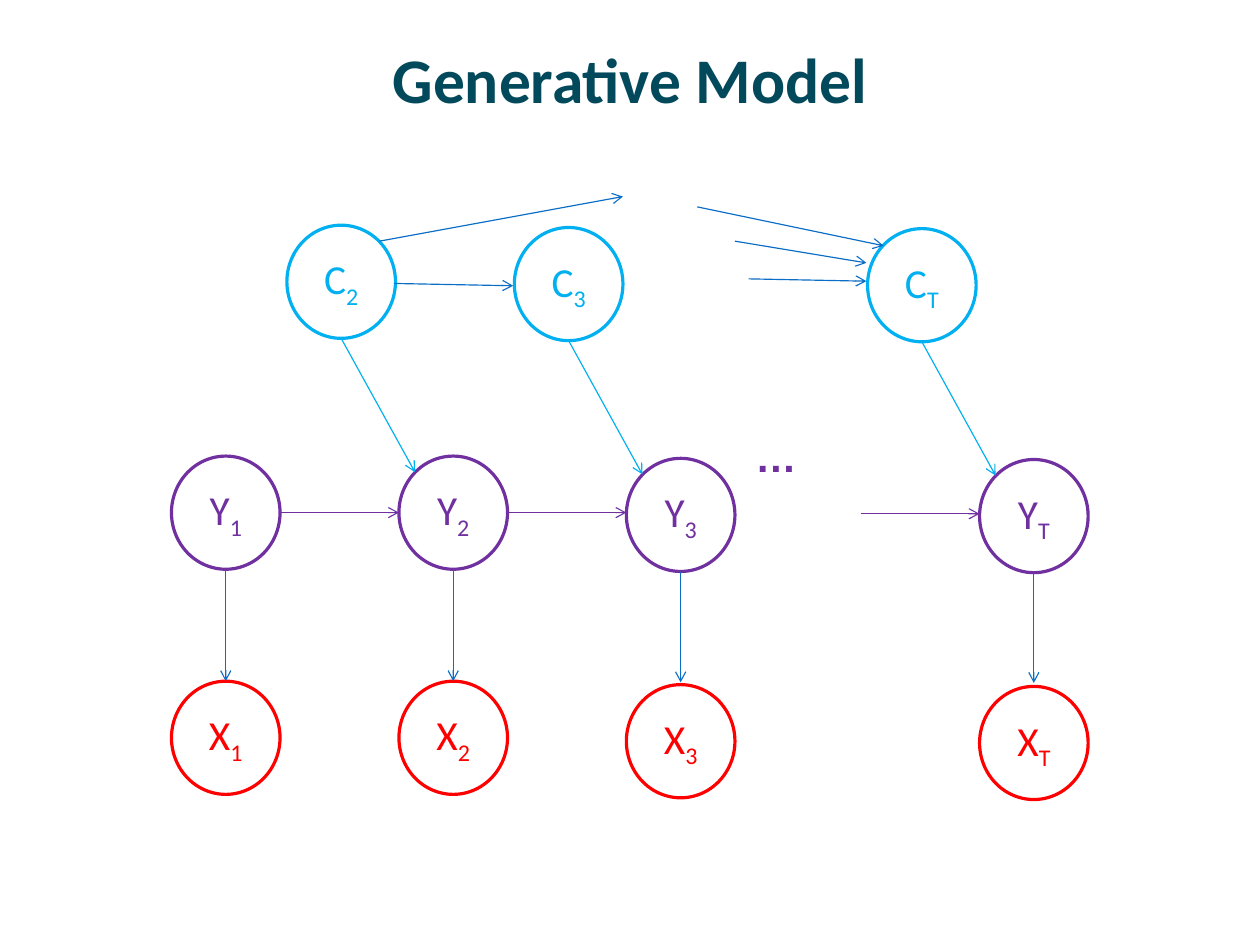
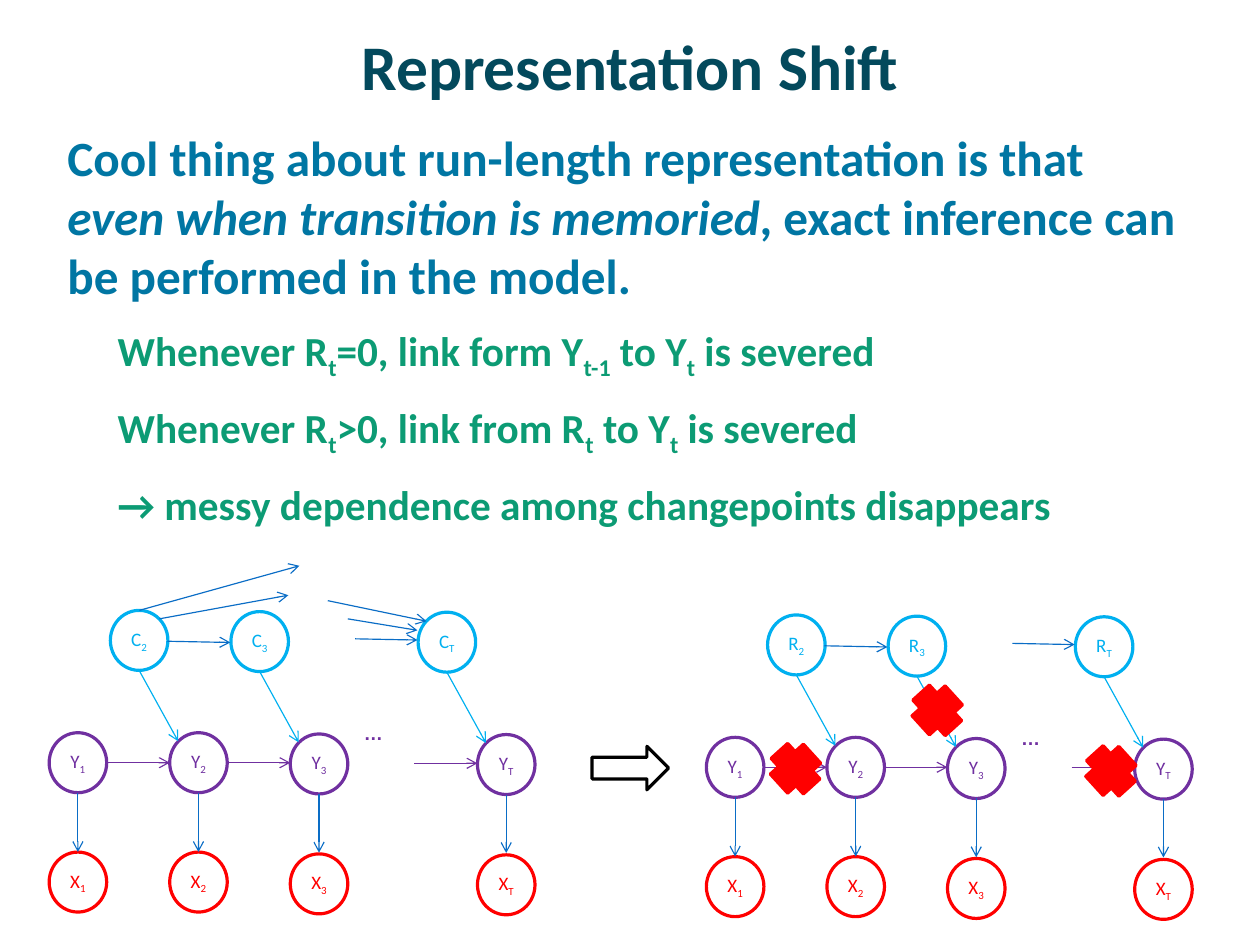
from lxml.etree import SubElement
from pptx import Presentation
from pptx.dml.color import RGBColor
from pptx.enum.shapes import MSO_CONNECTOR, MSO_SHAPE
from pptx.enum.text import MSO_ANCHOR, PP_ALIGN
from pptx.oxml.ns import qn
from pptx.util import Inches, Pt

NAVY = RGBColor(0x03, 0x49, 0x5C)
TEAL = RGBColor(0x00, 0x76, 0xA3)
GREEN = RGBColor(0x0C, 0x9B, 0x74)
PURPLE = RGBColor(0x70, 0x30, 0xA0)
RED = RGBColor(0xFF, 0x00, 0x00)
SKY = RGBColor(0x00, 0xB0, 0xF0)
BLUE = RGBColor(0x0A, 0x6D, 0xC6)
BLACK = RGBColor(0x00, 0x00, 0x00)
FONT = "Calibri"

# Graph units: inches at scale 1, from the left of the Y row and top of the C row
WIDE, HIGH = 0.95, 0.99
ROW_Y, ROW_X = 2.02, 3.99
GAP = 1.04
SHIFT = 0.98
COLS = [("1", 0, 0), ("2", 1.99, 0), ("3", 3.98, 0.02), ("T", 7.07, 0.03)]
CHAIN = [(1.95, 0.51, 2.99, 0.53), (5.05, 0.47, 6.08, 0.49)]
SKIPS = [(1.82, 0.14, 3.95, -0.25), (4.93, 0.14, 6.08, 0.33),
         (4.6, -0.16, 6.23, 0.18)]


def add_run(para, text, size, color, bold=False, italic=False, sub=False,
            font=FONT):
    run = para.add_run()
    run.text = text
    face = run.font
    face.name, face.size = font, Pt(size)
    face.bold, face.italic = bold, italic
    face.color.rgb = color
    if sub:
        run._r.get_or_add_rPr().set("baseline", "-25000")


def add_box(slide, left, top, width, height):
    box = slide.shapes.add_textbox(
        Inches(left), Inches(top), Inches(width), Inches(height))
    frame = box.text_frame
    frame.word_wrap = True
    return frame


def pad(frame, side, edge):
    frame.margin_left = frame.margin_right = Inches(side)
    frame.margin_top = frame.margin_bottom = Inches(edge)


def add_title(slide, text, height):
    frame = add_box(slide, 0.55, 0.18, 9.92, height)
    pad(frame, 0.11, 0.06)
    frame.vertical_anchor = MSO_ANCHOR.MIDDLE
    para = frame.paragraphs[0]
    para.alignment = PP_ALIGN.CENTER
    add_run(para, text, 40, NAVY, bold=True)


def add_form(slide, kind, left, top, width, height, color, fill=None):
    form = slide.shapes.add_shape(
        kind, Inches(left), Inches(top), Inches(width), Inches(height))
    form.shadow.inherit = False
    if fill is None:
        form.fill.background()
    else:
        form.fill.solid()
        form.fill.fore_color.rgb = fill
    form.line.color.rgb = color
    form.line.width = Pt(2)
    return form


def add_arrow(slide, x1, y1, x2, y2, color):
    line = slide.shapes.add_connector(
        MSO_CONNECTOR.STRAIGHT, Inches(x1), Inches(y1), Inches(x2), Inches(y2))
    line.line.color.rgb = color
    line.line.width = Pt(0.75)
    SubElement(line.line._ln, qn("a:tailEnd"), type="arrow")
    SubElement(line._element.spPr, qn("a:effectLst"))


def add_graph(slide, left, top, scale, size, letter, skips=()):
    """Draw the chain of nodes; letter names the nodes of the upper row."""

    def node(name, sub, x, y, color):
        form = add_form(slide, MSO_SHAPE.OVAL, left + x * scale,
                        top + y * scale, WIDE * scale, HIGH * scale, color)
        frame = form.text_frame
        pad(frame, 0, 0)
        frame.word_wrap = False
        frame.vertical_anchor = MSO_ANCHOR.MIDDLE
        para = frame.paragraphs[0]
        para.alignment = PP_ALIGN.CENTER
        add_run(para, name, size, color)
        add_run(para, sub, size, color, sub=True)

    def link(x1, y1, x2, y2, color):
        add_arrow(slide, left + x1 * scale, top + y1 * scale,
                  left + x2 * scale, top + y2 * scale, color)

    for sub, x, drop in COLS:
        mid = x + WIDE / 2
        node("Y", sub, x, ROW_Y + drop, PURPLE)
        node("X", sub, x, ROW_X + drop * 1.5, RED)
        link(mid, ROW_Y + HIGH + drop, mid, ROW_X + drop / 2, BLUE)
        if x > 0:
            level = ROW_Y + HIGH / 2 + max(drop - 0.02, 0)
            link(x - GAP, level, x, level, PURPLE)
            node(letter, sub, x - SHIFT, drop, SKY)
            link(mid - SHIFT, HIGH + drop, x + 0.14, ROW_Y + 0.14 + drop, SKY)
    for ends in [*CHAIN, *skips]:
        link(*ends, BLUE)
    dots = add_box(slide, left + 5.01 * scale, top + 1.75 * scale,
                   1.05 * scale, 0.67 * scale)
    add_run(dots.paragraphs[0], "…", size, PURPLE, bold=True, font="Arial")


def add_body(slide, left, top, width, height):
    frame = add_box(slide, left, top, width, height)
    pad(frame, 0.11, 0.06)
    lead = frame.paragraphs[0]
    lead._p.get_or_add_pPr().set("marL", str(Inches(0.11)))
    for text, slant in [
            ("Cool thing about run-length representation is that ", False),
            ("even when transition is memoried", True),
            (", exact inference can be performed in the model.", False)]:
        add_run(lead, text, 31, TEAL, bold=True, italic=slant)
    # Every second part of a point is a subscript
    for parts in [
            ("Whenever R", "t", "=0, link form Y", "t-1", " to Y", "t",
             " is severed"),
            ("Whenever R", "t", ">0, link from R", "t", " to Y", "t",
             " is severed"),
            ("→ messy dependence among changepoints disappears",)]:
        para = frame.add_paragraph()
        para.space_before = Pt(13.2)
        para._p.get_or_add_pPr().set("marL", str(Inches(0.55)))
        for i, text in enumerate(parts):
            add_run(para, text, 26, GREEN, bold=True, sub=i % 2 == 1)


def add_cross(slide, left, top):
    form = add_form(slide, MSO_SHAPE.CROSS, left, top, 0.42, 0.39, RED, RED)
    form.rotation = 47.8


def build_model(slide):
    add_title(slide, "Generative Model", 1.01)
    add_graph(slide, 1.5, 1.97, 1, 26, "C", SKIPS)


def build_shift(slide):
    add_title(slide, "Representation Shift", 0.78)
    add_body(slide, 0.37, 1.05, 10.11, 6.33)
    add_graph(slide, 0.43, 5.34, 0.53, 12, "C", SKIPS)
    add_arrow(slide, 1.22, 5.34, 2.62, 4.95, BLUE)
    add_form(slide, MSO_SHAPE.RIGHT_ARROW, 5.18, 6.53, 0.67, 0.38, BLACK)
    add_graph(slide, 6.18, 5.38, 0.53, 12, "R")
    for left, top in [(6.75, 6.53), (7.99, 6.02), (9.51, 6.55)]:
        add_cross(slide, left, top)


def main():
    deck = Presentation()
    # The page is 28 by 21 cm
    deck.slide_width = Inches(28 / 2.54)
    deck.slide_height = Inches(21 / 2.54)
    blank = deck.slide_layouts[6]
    build_model(deck.slides.add_slide(blank))
    build_shift(deck.slides.add_slide(blank))
    deck.save("out.pptx")


if __name__ == "__main__":
    main()
